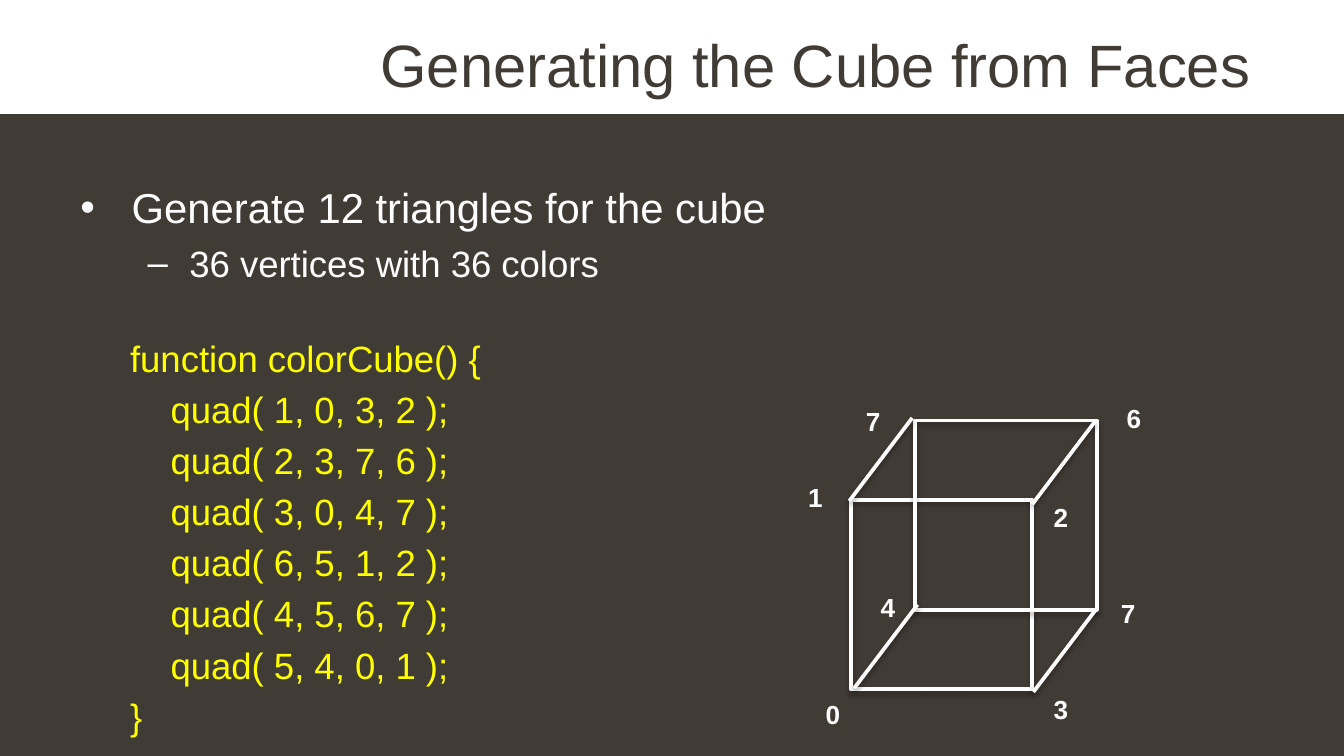
from dataclasses import dataclass

from lxml import etree
from pptx import Presentation
from pptx import util as u
from pptx.dml.color import RGBColor
from pptx.enum import shapes, text
from pptx.oxml import ns


@dataclass(frozen=True)
class Theme:
    font: str = "Arial"
    dark: str = "413B36"
    light: str = "FFFFFF"
    code: str = "FFFF00"
    shadow: str = "000000"
    title_size: float = 32
    body_size: float = 22.4
    sub_size: float = 19.6
    label_size: float = 14
    line_width: float = 2


def add_element(parent, tag, **attributes):
    return etree.SubElement(parent, ns.qn(tag), attributes)


class SlideBuilder:
    def __init__(self, slide, theme):
        self.slide = slide
        self.theme = theme

    def band(self, left, top, width, height):
        shape = self.slide.shapes.add_shape(
            shapes.MSO_SHAPE.RECTANGLE, u.Cm(left), u.Cm(top), u.Cm(width), u.Cm(height))
        shape.shadow.inherit = False
        shape.fill.solid()
        shape.fill.fore_color.rgb = RGBColor.from_string(self.theme.dark)
        shape.line.fill.background()

    def face(self, left, top, width, height):
        shape = self.slide.shapes.add_shape(
            shapes.MSO_SHAPE.RECTANGLE, u.Cm(left), u.Cm(top), u.Cm(width), u.Cm(height))
        shape.fill.background()
        self.outline(shape, opacity=35)

    def edge(self, left, top, run, rise):
        connector = self.slide.shapes.add_connector(
            shapes.MSO_CONNECTOR.STRAIGHT,
            u.Cm(left), u.Cm(top), u.Cm(left + run), u.Cm(top - rise))
        self.outline(connector, opacity=38)

    def outline(self, shape, opacity):
        shape.line.color.rgb = RGBColor.from_string(self.theme.light)
        shape.line.width = u.Pt(self.theme.line_width)
        effects = add_element(shape._element.spPr, "a:effectLst")
        shadow = add_element(
            effects, "a:outerShdw", blurRad=str(u.Pt(3.1)), dist=str(u.Pt(1.7)),
            dir="5400000", rotWithShape="0")
        color = add_element(shadow, "a:srgbClr", val=self.theme.shadow)
        add_element(color, "a:alpha", val=str(opacity * 1000))

    def text_box(self, left, top, width, height, anchor=text.MSO_ANCHOR.TOP):
        box = self.slide.shapes.add_textbox(u.Cm(left), u.Cm(top), u.Cm(width), u.Cm(height))
        frame = box.text_frame
        frame.word_wrap = True
        frame.vertical_anchor = anchor
        return frame

    def style(self, paragraph, size, color, bold=False):
        paragraph.font.name = self.theme.font
        paragraph.font.size = u.Pt(size)
        paragraph.font.bold = bold
        paragraph.font.color.rgb = RGBColor.from_string(color)

    def centered(self, words, place, size, color, bold=False):
        frame = self.text_box(*place, anchor=text.MSO_ANCHOR.MIDDLE)
        paragraph = frame.paragraphs[0]
        paragraph.text = words
        paragraph.alignment = text.PP_ALIGN.CENTER
        self.style(paragraph, size, color, bold)

    def line(self, frame, words, size, color, margin, hanging=0, bullet=None, before=0):
        paragraph = frame.paragraphs[0]
        if paragraph.text:
            paragraph = frame.add_paragraph()
        paragraph.text = words
        paragraph.space_before = u.Pt(before)
        properties = paragraph._p.get_or_add_pPr()
        properties.set("marL", str(u.Cm(margin)))
        properties.set("indent", str(u.Cm(-hanging)))
        if bullet:
            bullet_color = add_element(properties, "a:buClr")
            add_element(bullet_color, "a:srgbClr", val=color)
            add_element(properties, "a:buFont", typeface=self.theme.font)
            add_element(properties, "a:buChar", char=bullet)
        else:
            add_element(properties, "a:buNone")
        self.style(paragraph, size, color)


CODE = """function colorCube() {
    quad( 1, 0, 3, 2 );
    quad( 2, 3, 7, 6 );
    quad( 3, 0, 4, 7 );
    quad( 6, 5, 1, 2 );
    quad( 4, 5, 6, 7 );
    quad( 5, 4, 0, 1 );
}"""

FACES = [(16.08, 9.45), (17.3, 7.95)]
FACE_SIZE = (3.43, 3.58)
EDGE_STARTS = [(16.05, 9.47), (16.15, 13), (19.51, 9.53), (19.53, 13.08)]
EDGE_STEP = (1.19, 1.57)
VERTEX_LABELS = [
    ("1", 14.99, 8.97), ("7", 16.08, 7.52), ("4", 16.36, 11.05), ("6", 21.01, 7.47),
    ("7", 20.9, 11.15), ("2", 19.63, 9.35), ("3", 19.63, 12.98), ("0", 15.32, 13.06),
]
LABEL_SIZE = (0.84, 0.86)


def main():
    presentation = Presentation()
    presentation.slide_width = u.Cm(25.4)
    presentation.slide_height = u.Cm(14.29)
    theme = Theme()
    slide = presentation.slides.add_slide(presentation.slide_layouts[6])
    builder = SlideBuilder(slide, theme)

    builder.band(0, 2.16, 25.4, 12.13)
    builder.centered("Generating the Cube from Faces", (6.71, 0, 17.42, 2.39),
                     theme.title_size, theme.dark)

    body = builder.text_box(1.27, 3.32, 22.86, 9.42)
    builder.line(body, "Generate 12 triangles for the cube", theme.body_size, theme.light,
                 margin=0.97, hanging=0.97, bullet="•")
    builder.line(body, "36 vertices with 36 colors", theme.sub_size, theme.light,
                 margin=2.06, hanging=0.79, bullet="–", before=4.4)
    for number, code_line in enumerate(CODE.splitlines()):
        builder.line(body, code_line, theme.sub_size, theme.code,
                     margin=0.94, before=3.9 if number else 27.4)

    for corner in FACES:
        builder.face(*corner, *FACE_SIZE)
    for start in EDGE_STARTS:
        builder.edge(*start, *EDGE_STEP)
    for name, left, top in VERTEX_LABELS:
        builder.centered(name, (left, top, *LABEL_SIZE), theme.label_size, theme.light, bold=True)

    presentation.save("out.pptx")


if __name__ == "__main__":
    main()
